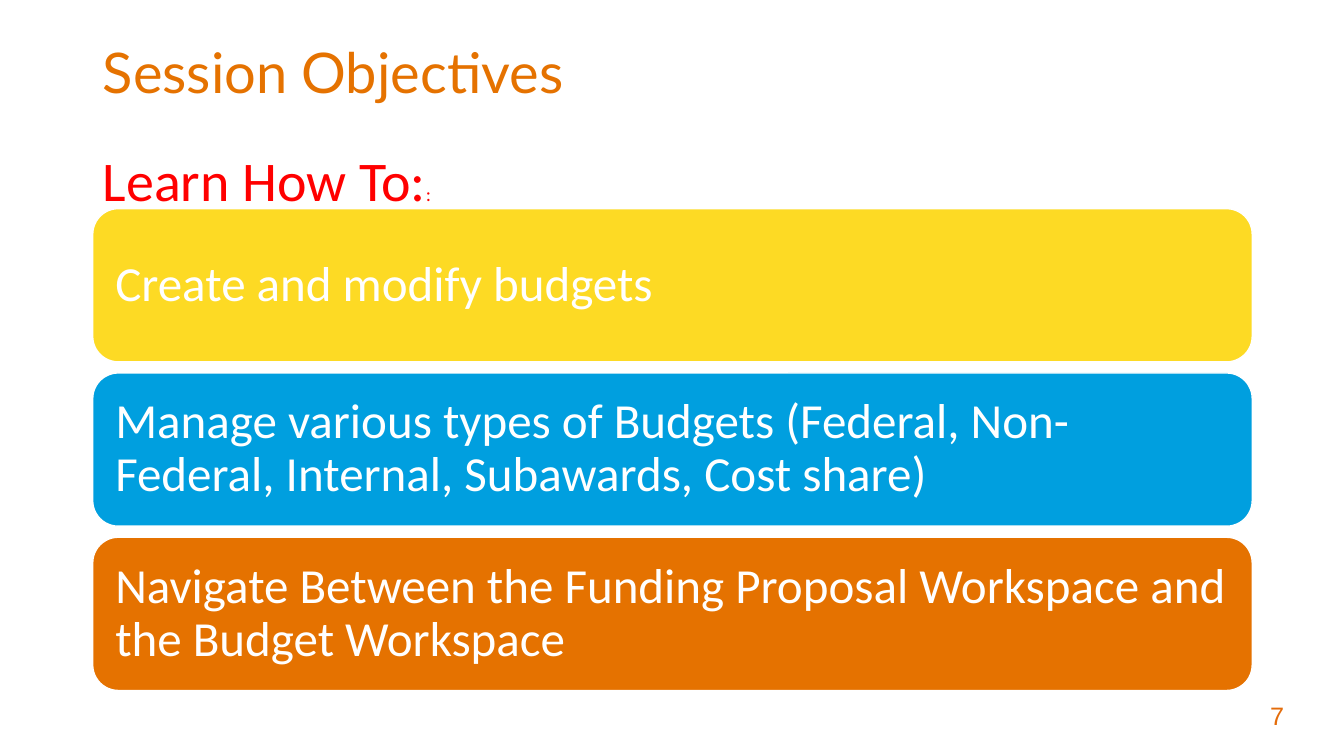
from dataclasses import dataclass

from pptx import Presentation
from pptx.dml.color import RGBColor
from pptx.enum.shapes import MSO_SHAPE
from pptx.enum.text import MSO_ANCHOR, PP_ALIGN
from pptx.util import Inches, Pt


@dataclass(frozen=True)
class Theme:
    orange: str = "E57200"
    yellow: str = "FDDA24"
    blue: str = "009FDF"
    white: str = "FFFFFF"
    red: str = "FF0000"
    number_color: str = "E46C0A"
    title_font: str = "Lato"
    body_font: str = "Calibri"
    number_font: str = "Arial"
    heading_size: int = 40
    card_size: int = 35
    number_size: int = 18
    colon_size: int = 14


THEME = Theme()
LEFT, CONTENT_WIDTH = 0.92, 11.5
CARD_TOP, CARD_HEIGHT, CARD_PITCH = 2.07, 1.52, 1.63
CARD_INSET = Inches(0.15)
OBJECTIVES = [
    ("Create and modify budgets", THEME.yellow),
    ("Manage various types of Budgets (Federal, Non-Federal, Internal, "
     "Subawards, Cost share)", THEME.blue),
    ("Navigate Between the Funding Proposal Workspace and the Budget Workspace",
     THEME.orange),
]


def box(left, top, width, height):
    return [Inches(length) for length in (left, top, width, height)]


def style(paragraph, name, size, color):
    paragraph.alignment = PP_ALIGN.LEFT
    paragraph.font.name = name
    paragraph.font.size = Pt(size)
    paragraph.font.color.rgb = RGBColor.from_string(color)


def add_title(slide, text):
    title = slide.shapes.title
    title.left, title.top, title.width, title.height = box(LEFT, 0.25, CONTENT_WIDTH, 1)
    title.text_frame.vertical_anchor = MSO_ANCHOR.MIDDLE
    paragraph = title.text_frame.paragraphs[0]
    paragraph.text = text
    paragraph.line_spacing = 0.9
    style(paragraph, THEME.title_font, THEME.heading_size, THEME.orange)


def add_text(slide, area, text, font, wrap=True):
    """Add a text box and return its paragraph; font is (name, size, color)."""
    frame = slide.shapes.add_textbox(*area).text_frame
    frame.word_wrap = wrap
    paragraph = frame.paragraphs[0]
    paragraph.text = text
    style(paragraph, *font)
    return paragraph


def add_card(slide, row, text, color):
    area = box(LEFT, CARD_TOP + row * CARD_PITCH, CONTENT_WIDTH, CARD_HEIGHT)
    card = slide.shapes.add_shape(MSO_SHAPE.ROUNDED_RECTANGLE, *area)
    card.shadow.inherit = False
    card.fill.solid()
    card.fill.fore_color.rgb = RGBColor.from_string(color)
    card.line.color.rgb = RGBColor.from_string(THEME.white)
    card.line.width = Pt(1)
    frame = card.text_frame
    frame.word_wrap = True
    frame.vertical_anchor = MSO_ANCHOR.MIDDLE
    frame.margin_left = frame.margin_right = CARD_INSET
    frame.margin_top = frame.margin_bottom = CARD_INSET
    paragraph = frame.paragraphs[0]
    paragraph.text = text
    paragraph.line_spacing = 0.9
    style(paragraph, THEME.body_font, THEME.card_size, THEME.white)


def main():
    presentation = Presentation()
    presentation.slide_width = Inches(13.33)
    presentation.slide_height = Inches(7.5)
    slide = presentation.slides.add_slide(presentation.slide_layouts[5])

    add_title(slide, "Session Objectives")
    for row, (text, color) in enumerate(OBJECTIVES):
        add_card(slide, row, text, color)
    lead_in = add_text(slide, box(LEFT, 1.39, 4, 0.77), "Learn How To:",
                       (THEME.body_font, THEME.heading_size, THEME.red))
    small_colon = lead_in.add_run()
    small_colon.text = ":"
    small_colon.font.size = Pt(THEME.colon_size)
    add_text(slide, box(12.5, 6.9, 0.51, 0.4), "7",
             (THEME.number_font, THEME.number_size, THEME.number_color), wrap=False)

    presentation.save("out.pptx")


if __name__ == "__main__":
    main()
